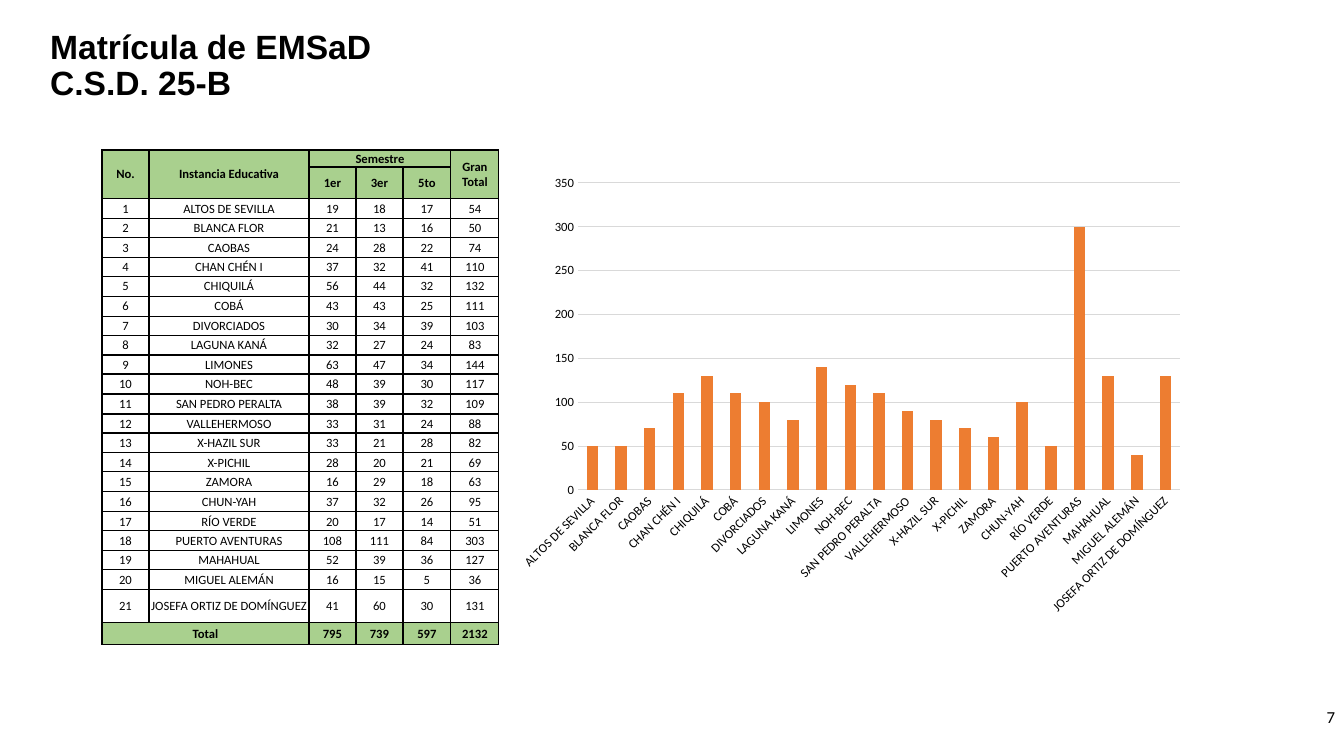
from copy import deepcopy
from lxml import etree
from pptx import Presentation
from pptx import util as u
from pptx.chart import data as cd
from pptx.dml.color import RGBColor
from pptx.enum import chart as ch, text as tx
from pptx.oxml import parse_xml
from pptx.oxml.ns import nsdecls, qn

PX = 914400 / 100.8
THEME = dict(ink="000000", head="A9D08E", bar="ED7D31", grid="D9D9D9",
             title=24, page=12, chart=10, small=9, display="Arial", body="Calibri")


def px(*vals):
    return [u.Emu(round(v * PX)) for v in vals]


def write(frame, words, size=THEME["small"], font=THEME["body"], bold=False,
          align=tx.PP_ALIGN.CENTER, gap=None):
    """Put words in a text frame and format them."""
    frame.word_wrap = True
    frame.text = words
    par = frame.paragraphs[0]
    par.alignment = align
    par.line_spacing = gap
    for run in par.runs:
        run.font.size = u.Pt(size)
        run.font.name = font
        run.font.bold = bold
        run.font.color.rgb = RGBColor.from_string(THEME["ink"])
    for brk in par._p.findall(qn("a:br")):
        brk.append(deepcopy(par.runs[0]._r.rPr))


# School, then pupils in semesters 1, 3 and 5
schools = [
    ("ALTOS DE SEVILLA", 19, 18, 17), ("BLANCA FLOR", 21, 13, 16),
    ("CAOBAS", 24, 28, 22), ("CHAN CHÉN I", 37, 32, 41),
    ("CHIQUILÁ", 56, 44, 32), ("COBÁ", 43, 43, 25),
    ("DIVORCIADOS", 30, 34, 39), ("LAGUNA KANÁ", 32, 27, 24),
    ("LIMONES", 63, 47, 34), ("NOH-BEC", 48, 39, 30),
    ("SAN PEDRO PERALTA", 38, 39, 32), ("VALLEHERMOSO", 33, 31, 24),
    ("X-HAZIL SUR", 33, 21, 28), ("X-PICHIL", 28, 20, 21),
    ("ZAMORA", 16, 29, 18), ("CHUN-YAH", 37, 32, 26),
    ("RÍO VERDE", 20, 17, 14), ("PUERTO AVENTURAS", 108, 111, 84),
    ("MAHAHUAL", 52, 39, 36), ("MIGUEL ALEMÁN", 16, 15, 5),
    ("JOSEFA ORTIZ DE DOMÍNGUEZ", 41, 60, 30),
]
names = [school[0] for school in schools]
totals = [sum(school[1:]) for school in schools]

deck = Presentation()
deck.slide_width, deck.slide_height = px(1344, 756)
slide = deck.slides.add_slide(deck.slide_layouts[5])

# Title
title = slide.shapes.title
title.left, title.top, title.width, title.height = px(40, -17, 1044, 167)
title.text_frame.auto_size = tx.MSO_AUTO_SIZE.NONE
title.text_frame.vertical_anchor = tx.MSO_ANCHOR.MIDDLE
write(title.text_frame, "Matrícula de EMSaD\vC.S.D. 25-B", size=THEME["title"],
      font=THEME["display"], bold=True, align=tx.PP_ALIGN.LEFT, gap=0.9)

# Page number
page = slide.shapes.add_textbox(*px(1044, 697, 301, 40)).text_frame
page.vertical_anchor = tx.MSO_ANCHOR.MIDDLE
write(page, "7", size=THEME["page"], align=tx.PP_ALIGN.RIGHT)

# Enrolment table, with the totals as published
rows = [["No.", "Instancia Educativa", "Semestre", "", "", "Gran Total"],
        ["", "", "1er", "3er", "5to", ""]]
rows += [[i, *school, total]
         for i, (school, total) in enumerate(zip(schools, totals), 1)]
rows.append(["Total", "", 795, 739, 597, 2132])
wide = [47, 160, 47, 47, 48, 48]
high = [17, 17] + [20 - (i % 5 in (1, 3)) for i in range(20)] + [33, 22]
last = len(rows) - 1
table = slide.shapes.add_table(len(rows), len(wide),
                               *px(102, 150, sum(wide), sum(high))).table
table.first_row = table.horz_banding = False
for col, w in zip(table.columns, px(*wide)):
    col.width = w
for row, h in zip(table.rows, px(*high)):
    row.height = h
for r, row in enumerate(rows):
    strong = r < 2 or r == last
    for c, item in enumerate(row):
        cell = table.cell(r, c)
        cell.margin_left, cell.margin_top, cell.margin_right, cell.margin_bottom = px(1, 1, 1, 0)
        cell.vertical_anchor = tx.MSO_ANCHOR.MIDDLE
        write(cell.text_frame, str(item), bold=strong)
        prop = cell._tc.get_or_add_tcPr()
        for side in ("lnL", "lnR", "lnT", "lnB"):
            prop.append(parse_xml(
                f'<a:{side} {nsdecls("a")} w="12700"><a:solidFill>'
                f'<a:srgbClr val="{THEME["ink"]}"/></a:solidFill></a:{side}>'))
        if strong:
            cell.fill.solid()
            cell.fill.fore_color.rgb = RGBColor.from_string(THEME["head"])
        else:
            cell.fill.background()
for r1, c1, r2, c2 in [(0, 0, 1, 0), (0, 1, 1, 1), (0, 2, 0, 4), (0, 5, 1, 5),
                       (last, 0, last, 1)]:
    table.cell(r1, c1).merge(table.cell(r2, c2))

# Column chart of the totals, to the nearest ten
data = cd.CategoryChartData()
data.categories = names
data.add_series("Gran Total", [round(total, -1) for total in totals])
chart = slide.shapes.add_chart(ch.XL_CHART_TYPE.COLUMN_CLUSTERED,
                               *px(506, 167, 688, 457), data).chart
chart.has_title = chart.has_legend = False
chart.font.size = u.Pt(THEME["chart"])
chart.font.name = THEME["body"]
plot = chart.plots[0]
plot.gap_width = 150
plot.vary_by_categories = False
bars = plot.series[0].format.fill
bars.solid()
bars.fore_color.rgb = RGBColor.from_string(THEME["bar"])

# Axes and grid
for axis in (chart.category_axis, chart.value_axis):
    axis.major_tick_mark = axis.minor_tick_mark = ch.XL_TICK_MARK.NONE
    axis.format.line.fill.background()
    face = axis.tick_labels.font
    face.size = u.Pt(THEME["small"])
    face.name = THEME["body"]
    face.color.rgb = RGBColor.from_string(THEME["ink"])
chart.category_axis._element.find(qn("c:txPr")).find(qn("a:bodyPr")).set("rot", "-2700000")
scale = chart.value_axis
scale.minimum_scale, scale.maximum_scale, scale.major_unit = 0, 350, 50
grid = scale.major_gridlines.format.line
grid.width = u.Pt(0.75)
grid.color.rgb = RGBColor.from_string(THEME["grid"])

# Plot area inside the chart
area = chart._chartSpace.chart.plotArea
for old in area.findall(qn("c:layout")):
    area.remove(old)
layout = etree.Element(qn("c:layout"))
inner = etree.SubElement(layout, qn("c:manualLayout"))
for tag, val in [("layoutTarget", "inner"), ("xMode", "edge"), ("yMode", "edge"),
                 ("x", 72 / 688), ("y", 16 / 457), ("w", 602 / 688), ("h", 307 / 457)]:
    etree.SubElement(inner, qn(f"c:{tag}")).set("val", str(val))
area.insert(0, layout)

deck.save("out.pptx")
